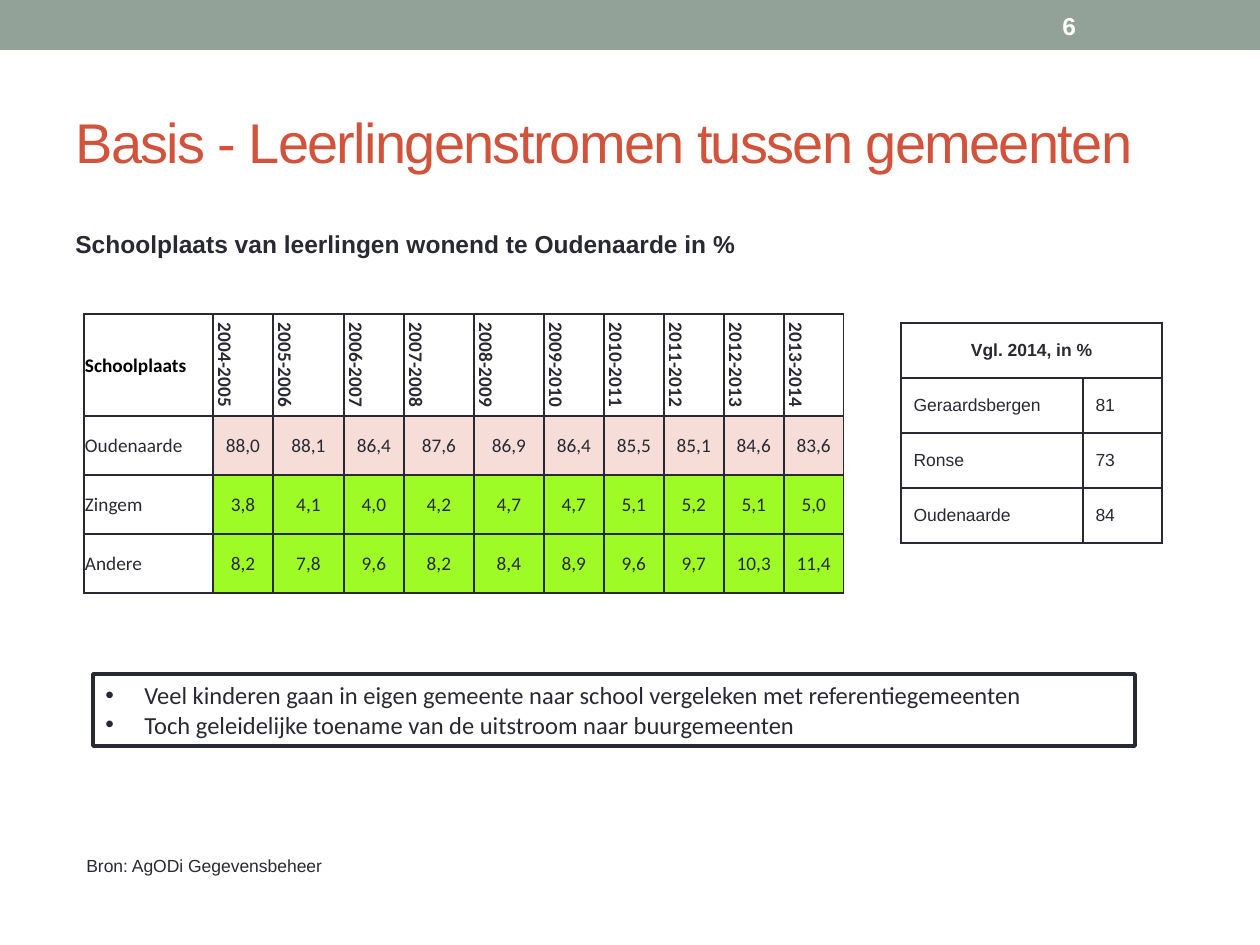
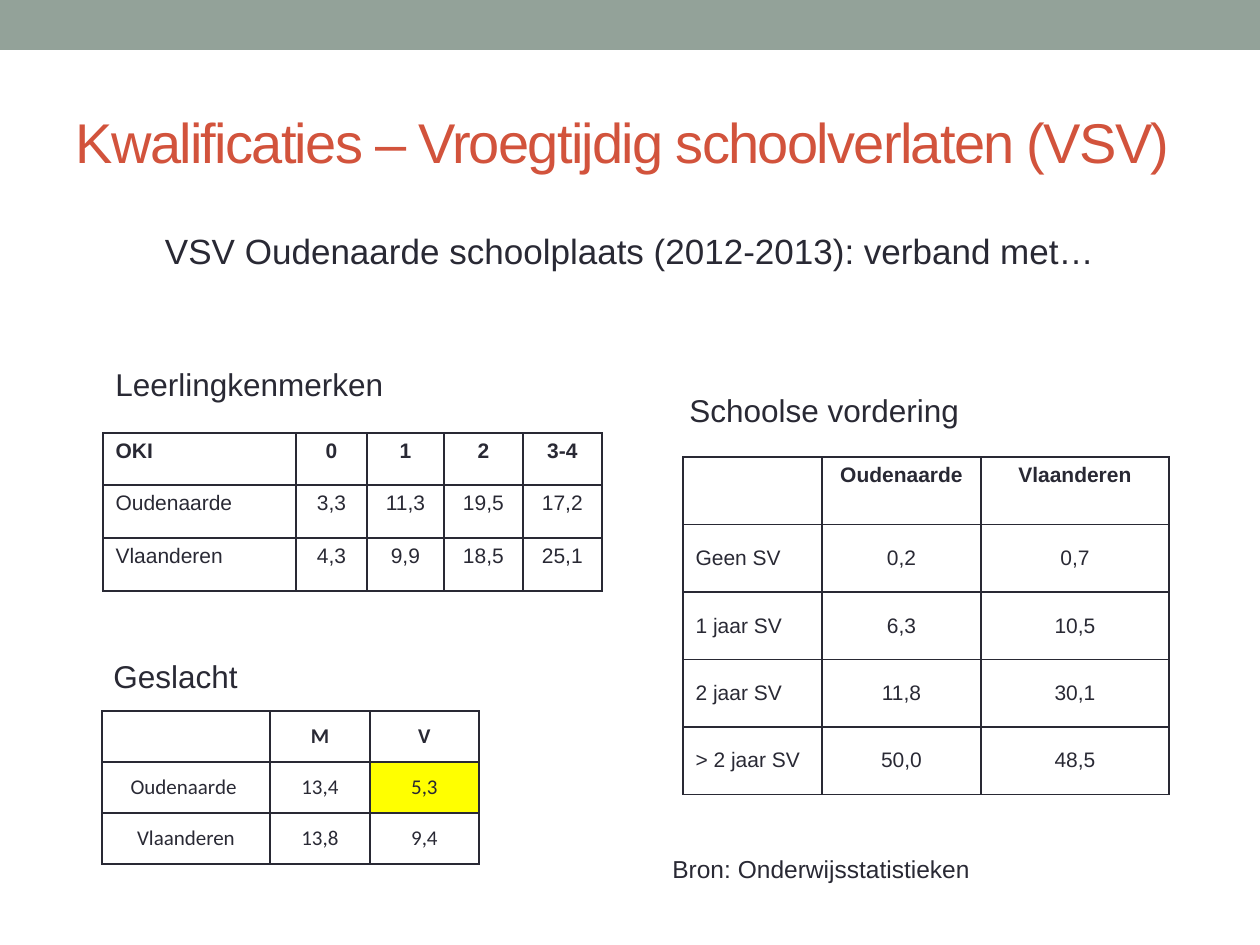
from lxml.etree import SubElement
from pptx import Presentation
from pptx.dml.color import RGBColor
from pptx.enum.shapes import MSO_SHAPE
from pptx.enum.text import MSO_ANCHOR, PP_ALIGN
from pptx.oxml.ns import qn
from pptx.util import Pt

SCALE = 914400 / 126
INK, BRICK, SAGE, WHITE = "292934", "D2533C", "93A299", "FFFFFF"
ROSE, LIME, YELLOW = "F6DDD8", "9FFB25", "FFFF00"
ALIGN = {"left": PP_ALIGN.LEFT, "center": PP_ALIGN.CENTER}
ANCHOR = {"top": MSO_ANCHOR.TOP, "middle": MSO_ANCHOR.MIDDLE}


def px(*values):
    return [round(value * SCALE) for value in values]


def paint(target, color):
    """Give a fill or a line's fill one solid colour."""
    target.solid()
    target.fore_color.rgb = RGBColor.from_string(color)


def write(frame, text, size=12, font="Arial", color=INK, bold=False,
          align="left", track=0, bullet=False):
    """Put each line of text in a paragraph of its own."""
    for i, line in enumerate(text.split("\n")):
        para = frame.paragraphs[0] if i == 0 else frame.add_paragraph()
        para.alignment = ALIGN[align]
        run = para.add_run()
        run.text = line
        run.font.size = Pt(size)
        run.font.name = font
        run.font.bold = bold
        run.font.color.rgb = RGBColor.from_string(color)
        if track:
            run.font._element.set("spc", str(track * 100))
        if bullet:
            props = para._p.get_or_add_pPr()
            indent = px(39)[0]
            props.set("marL", str(indent))
            props.set("indent", str(-indent))
            SubElement(props, qn("a:buFont"), typeface="Arial")
            SubElement(props, qn("a:buChar"), char="•")


def label(slide, box, text, wrap=False, anchor="top", **look):
    frame = slide.shapes.add_textbox(*px(*box)).text_frame
    frame.word_wrap = wrap
    frame.vertical_anchor = ANCHOR[anchor]
    write(frame, text, **look)


def panel(slide, box, fill, line=None):
    shape = slide.shapes.add_shape(MSO_SHAPE.RECTANGLE, *px(*box))
    shape.shadow.inherit = False
    paint(shape.fill, fill)
    if line:
        paint(shape.line.fill, line)
        shape.line.width = Pt(2.08)
    else:
        shape.line.fill.background()
    return shape


def edge(cell):
    """Draw a thin line on all four sides of a cell."""
    props = cell._tc.get_or_add_tcPr()
    for side in ("lnL", "lnR", "lnT", "lnB"):
        line = SubElement(props, qn(f"a:{side}"), w=str(Pt(1)))
        fill = SubElement(line, qn("a:solidFill"))
        SubElement(fill, qn("a:srgbClr"), val=INK)


def fill_cell(cell, text, fill=WHITE, anchor="middle", tight=False,
              turn=False, **look):
    edge(cell)
    paint(cell.fill, fill)
    cell.vertical_anchor = ANCHOR[anchor]
    if tight:
        cell.margin_left = cell.margin_right = cell.margin_top = px(1)[0]
        cell.margin_bottom = 0
    if turn:
        cell._tc.get_or_add_tcPr().set("vert", "vert")
    write(cell.text_frame, text, **look)


def grid(slide, spot, cols, rows, data, style):
    """Add a table; style(row, col) gives what differs from a plain cell."""
    box = px(*spot, sum(cols), sum(rows))
    table = slide.shapes.add_table(len(rows), len(cols), *box).table
    table.first_row = table.horz_banding = False
    for col, width in zip(table.columns, px(*cols)):
        col.width = width
    for row, height in zip(table.rows, px(*rows)):
        row.height = height
    for r, line in enumerate(data):
        for c, text in enumerate(line):
            look = {"bold": r == 0, "align": "center" if c else "left"}
            fill_cell(table.cell(r, c), text, **{**look, **style(r, c)})
    return table


def start(deck, title):
    """Add a slide with the top band and its title."""
    slide = deck.slides.add_slide(deck.slide_layouts[5])
    panel(slide, (0, 0, 1260, 50), SAGE)
    head = slide.shapes.title
    head.left, head.top, head.width, head.height = px(63, 73, 1134, 136)
    head.text_frame.vertical_anchor = MSO_ANCHOR.MIDDLE
    write(head.text_frame, title, size=32, color=BRICK, track=-1)
    return slide


def flow_style(r, c):
    look = {"size": 11, "font": "Calibri", "tight": True}
    if r == 0:
        look.update(turn=c > 0, color=INK if c else "000000")
    elif c:
        look["fill"] = ROSE if r == 1 else LIME
    return look


def peer_style(r, c):
    return {"size": 10, "align": "left" if r else "center"}


def oki_style(r, c):
    return {"anchor": "top"}


def sex_style(r, c):
    return {"font": "Calibri", "align": "center",
            "fill": YELLOW if (r, c) == (1, 2) else WHITE}


def delay_style(r, c):
    return {"anchor": "middle" if r else "top"}


def flows(deck):
    slide = start(deck, "Basis - Leerlingenstromen tussen gemeenten")
    label(slide, (63, 223, 1134, 60),
          "Schoolplaats van leerlingen wonend te Oudenaarde in %",
          wrap=True, size=14, bold=True)
    years = [f"{year}-{year + 1}" for year in range(2004, 2014)]
    places = [
        "Oudenaarde 88,0 88,1 86,4 87,6 86,9 86,4 85,5 85,1 84,6 83,6",
        "Zingem 3,8 4,1 4,0 4,2 4,7 4,7 5,1 5,2 5,1 5,0",
        "Andere 8,2 7,8 9,6 8,2 8,4 8,9 9,6 9,7 10,3 11,4",
    ]
    grid(slide, (84, 314), [129, 60, 71, 60, 70, 70] + [60] * 5,
         [102] + [59] * 3,
         [["Schoolplaats", *years]] + [row.split() for row in places],
         flow_style)
    notes = panel(slide, (93, 674, 1042, 72), WHITE, INK).text_frame
    notes.word_wrap = True
    notes.vertical_anchor = MSO_ANCHOR.TOP
    write(notes, "Veel kinderen gaan in eigen gemeente naar school vergeleken "
          "met referentiegemeenten\n"
          "Toch geleidelijke toename van de uitstroom naar buurgemeenten",
          size=14, font="Calibri", bullet=True)
    label(slide, (74, 849, 263, 72), "Bron: AgODi Gegevensbeheer", size=10)
    peers = grid(slide, (901, 323), [182, 79], [55] * 4,
                 [["Vgl. 2014, in %", ""], ["Geraardsbergen", "81"],
                  ["Ronse", "73"], ["Oudenaarde", "84"]], peer_style)
    peers.cell(0, 0).merge(peers.cell(0, 1))
    label(slide, (1050, 3, 147, 45), "6", wrap=True, anchor="middle",
          size=14, bold=True, color=WHITE)


def leavers(deck):
    slide = start(deck, "Kwalificaties – Vroegtijdig schoolverlaten (VSV)")
    label(slide, (63, 223, 1134, 60),
          "VSV Oudenaarde schoolplaats (2012-2013): verband met…",
          wrap=True, size=20, align="center")
    label(slide, (103, 359, 296, 50), "Leerlingkenmerken", size=18)
    grid(slide, (103, 433), [193, 71, 77, 79, 79], [52, 53, 53],
         [["OKI", "0", "1", "2", "3-4"],
          ["Oudenaarde", "3,3", "11,3", "19,5", "17,2"],
          ["Vlaanderen", "4,3", "9,9", "18,5", "25,1"]], oki_style)
    label(slide, (101, 651, 151, 50), "Geslacht", size=18)
    grid(slide, (102, 711), [168, 100, 109], [51] * 3,
         [["", "M", "V"], ["Oudenaarde ", "13,4", "5,3"],
          ["Vlaanderen", "13,8", "9,4"]], sex_style)
    label(slide, (677, 385, 297, 50), "Schoolse vordering", size=18)
    grid(slide, (683, 457), [139, 159, 188], [67.5] * 5,
         [["", "Oudenaarde", "Vlaanderen"], ["Geen SV", "0,2", "0,7"],
          ["1 jaar SV", "6,3", "10,5"], ["2 jaar SV", "11,8", "30,1"],
          ["> 2 jaar SV", "50,0", "48,5"]], delay_style)
    label(slide, (660, 848, 325, 43), "Bron: Onderwijsstatistieken", size=14)


def main():
    deck = Presentation()
    deck.slide_width, deck.slide_height = px(1260, 945)
    flows(deck)
    leavers(deck)
    deck.save("out.pptx")


if __name__ == "__main__":
    main()
